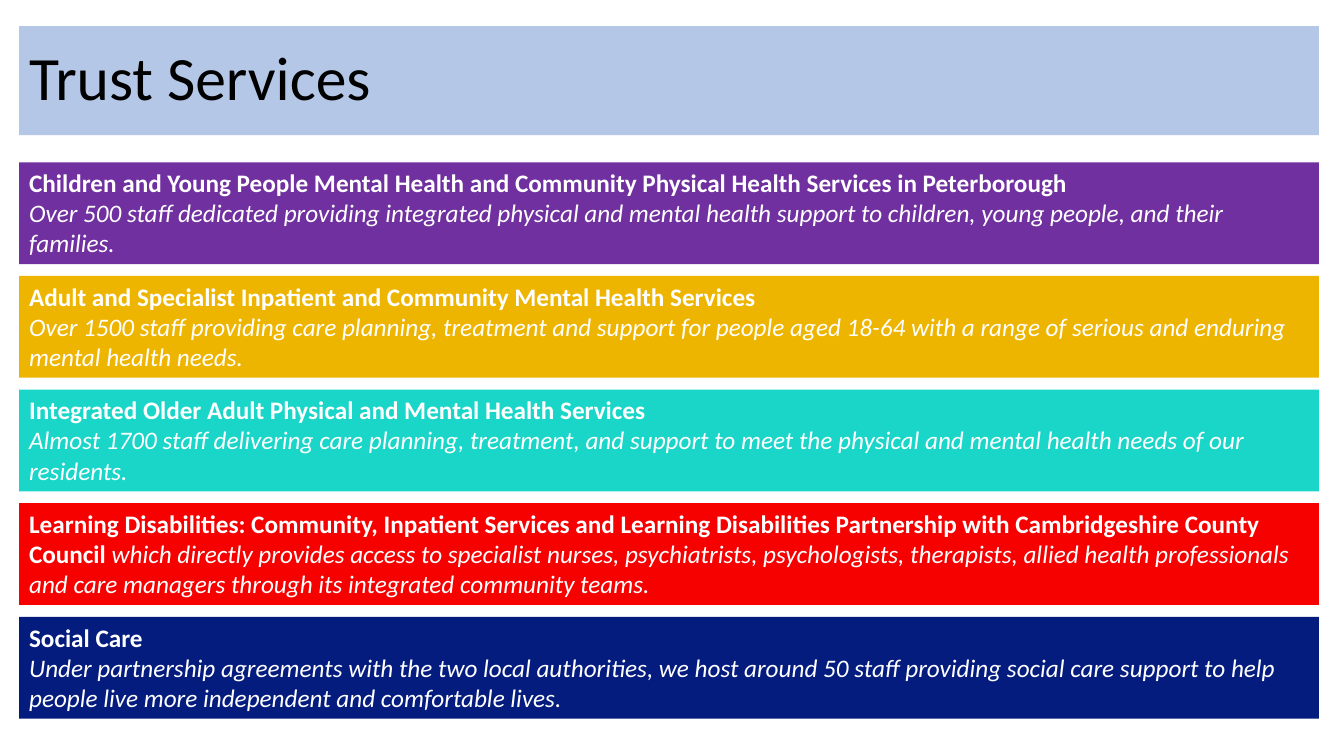
from pptx import Presentation
from pptx.dml.color import RGBColor
from pptx.enum.shapes import MSO_SHAPE
from pptx.enum.text import MSO_ANCHOR, MSO_AUTO_SIZE, PP_ALIGN
from pptx.util import Inches, Pt

COLOURS = {
    "title": "B4C7E7",
    "children": "7030A0",
    "adult": "EEB500",
    "older": "1AD6C9",
    "learning": "F60000",
    "social": "051C7F",
    "dark": "000000",
    "light": "FFFFFF",
}
FONT = "Calibri"
LEFT, WIDTH = 0.19, 12.89
TITLE_TOP, TITLE_HEIGHT = 0.26, 1.08
FIRST_TOP, LAST_TOP, BAND_HEIGHT = 1.61, 6.12, 1.01

HEADING = {"size": Pt(18), "bold": True, "italic": False}
DETAIL = {"size": Pt(18), "bold": False, "italic": True}
TITLE_FRAME = {"vertical_anchor": MSO_ANCHOR.MIDDLE, "auto_size": MSO_AUTO_SIZE.NONE}
BAND_FRAME = {"vertical_anchor": MSO_ANCHOR.TOP,
              "auto_size": MSO_AUTO_SIZE.SHAPE_TO_FIT_TEXT}

# Colour key, then paragraphs, each a list of (text, format) runs
SERVICES = [
    ("children", [
        [("Children and Young People Mental Health and Community Physical "
          "Health Services in Peterborough", HEADING)],
        [("Over 500 staff dedicated providing integrated physical and mental "
          "health support to children, young people, and their families.", DETAIL)],
    ]),
    ("adult", [
        [("Adult and Specialist Inpatient and Community Mental Health Services", HEADING)],
        [("Over 1500 staff providing care planning, treatment and support for "
          "people aged 18-64 with a range of serious and enduring mental health "
          "needs.", DETAIL)],
    ]),
    ("older", [
        [("Integrated Older Adult Physical and Mental Health Services", HEADING)],
        [("Almost 1700 staff delivering care planning, treatment, and support to "
          "meet the physical and mental health needs of our residents.", DETAIL)],
    ]),
    ("learning", [
        [("Learning Disabilities: Community, Inpatient Services and Learning "
          "Disabilities Partnership with Cambridgeshire County Council ", HEADING),
         ("which directly provides access to specialist nurses, psychiatrists, "
          "psychologists, therapists, allied health professionals and care "
          "managers through its integrated community teams.", DETAIL)],
    ]),
    ("social", [
        [("Social Care", HEADING)],
        [("Under partnership agreements with the two local authorities, we host "
          "around 50 staff providing social care support to help people live more "
          "independent and comfortable lives.", DETAIL)],
    ]),
]


def rgb(name):
    return RGBColor.from_string(COLOURS[name])


def add_run(p, text, colour, fmt):
    r = p.add_run()
    r.text = text
    r.font.name = FONT
    r.font.color.rgb = rgb(colour)
    for name, value in fmt.items():
        setattr(r.font, name, value)


def add_band(slide, top, height, fill, paragraphs, colour, frame):
    """Add a full-width filled rectangle; frame holds text frame settings."""
    sp = slide.shapes.add_shape(MSO_SHAPE.RECTANGLE, Inches(LEFT), Inches(top),
                                Inches(WIDTH), Inches(height))
    sp.shadow.inherit = False
    sp.fill.solid()
    sp.fill.fore_color.rgb = rgb(fill)
    sp.line.fill.background()
    tf = sp.text_frame
    tf.word_wrap = True
    for name, value in frame.items():
        setattr(tf, name, value)
    for i, runs in enumerate(paragraphs):
        p = tf.add_paragraph() if i else tf.paragraphs[0]
        p.alignment = PP_ALIGN.LEFT
        for text, fmt in runs:
            add_run(p, text, colour, fmt)
    return sp


def add_title(slide, text):
    sp = add_band(slide, TITLE_TOP, TITLE_HEIGHT, "title",
                  [[(text, {"size": Pt(44)})]], "dark", TITLE_FRAME)
    sp.text_frame.paragraphs[0].line_spacing = 0.9


def main():
    prs = Presentation()
    prs.slide_width, prs.slide_height = Inches(13.33), Inches(7.5)
    slide = prs.slides.add_slide(prs.slide_layouts[6])
    add_title(slide, "Trust Services")
    pitch = (LAST_TOP - FIRST_TOP) / (len(SERVICES) - 1)
    for i, (service, paragraphs) in enumerate(SERVICES):
        add_band(slide, FIRST_TOP + i * pitch, BAND_HEIGHT, service, paragraphs,
                 "light", BAND_FRAME)
    prs.save("out.pptx")


if __name__ == "__main__":
    main()
